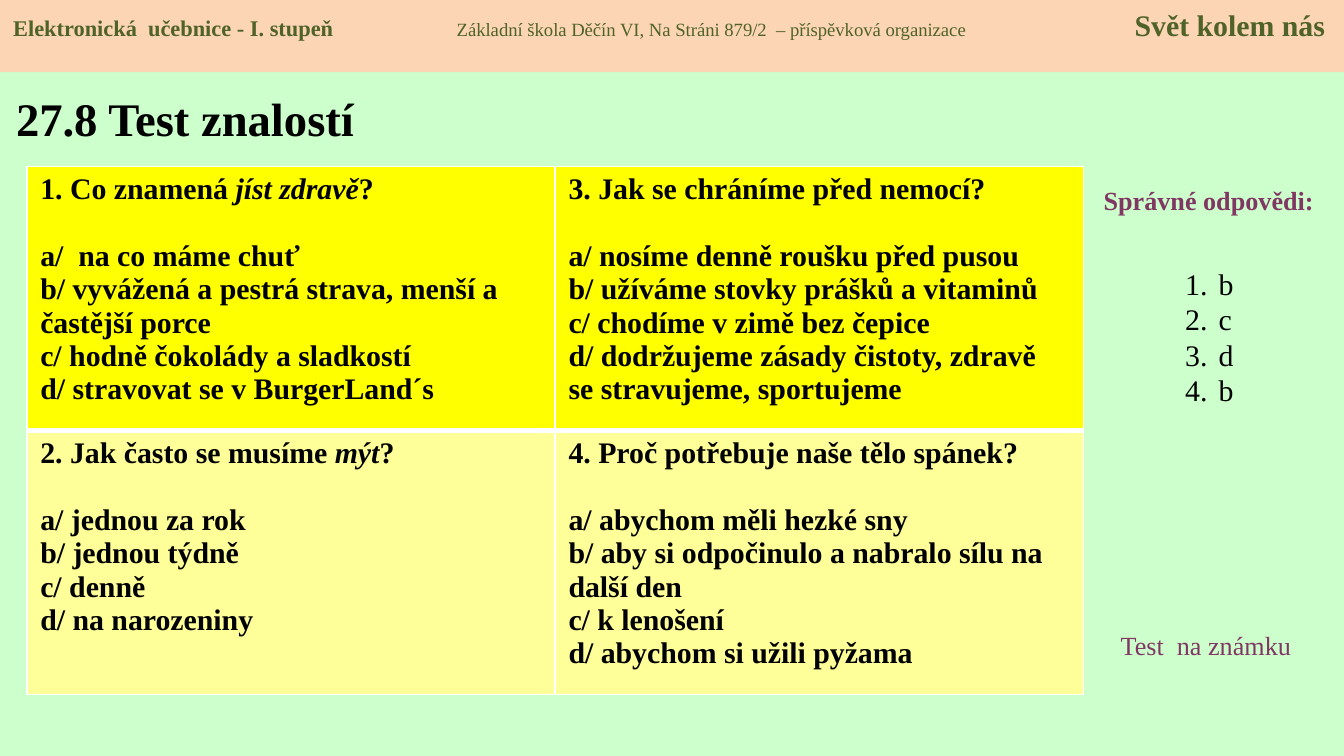
from lxml import etree
from pptx import Presentation
from pptx.dml.color import RGBColor
from pptx.enum.shapes import MSO_SHAPE
from pptx.enum.text import MSO_ANCHOR, PP_ALIGN
from pptx.oxml import parse_xml
from pptx.oxml.ns import nsdecls, qn
from pptx.util import Pt

RECTANGLE = MSO_SHAPE.RECTANGLE
TOP, MIDDLE = MSO_ANCHOR.TOP, MSO_ANCHOR.MIDDLE
LEFT, CENTER = PP_ALIGN.LEFT, PP_ALIGN.CENTER
BLACK, WHITE, PLUM, GREEN = "000000", "FFFFFF", "813763", "4F6228"


def color(value):
    return RGBColor.from_string(value)


def add_run(paragraph, text, font_color, **formats):
    run = paragraph.add_run()
    run.text = text
    run.font.color.rgb = color(font_color)
    for name, value in {"name": "Times New Roman", **formats}.items():
        setattr(run.font, name, value)


presentation = Presentation()
presentation.slide_width, presentation.slide_height = Pt(720), Pt(405)
slide = presentation.slides.add_slide(presentation.slide_layouts[6])
slide.background.fill.solid()
slide.background.fill.fore_color.rgb = color("CCFFCC")

labels = [
    ("27.8 Test znalostí", (1.5, 39.6, 229.7, 46.8), LEFT, MIDDLE, BLACK, {"size": Pt(25), "bold": True}),
    ("Správné odpovědi:", (579.6, 95, 136, 24.5), CENTER, TOP, PLUM, {"size": Pt(14), "bold": True}),
    ("Test  na známku", (593.3, 333.4, 113, 24.5), LEFT, TOP, PLUM, {"size": Pt(14)}),
]
for text, box, alignment, anchor, font_color, formats in labels:
    frame = slide.shapes.add_textbox(*map(Pt, box)).text_frame
    frame.word_wrap = True
    frame.vertical_anchor = anchor
    frame.paragraphs[0].alignment = alignment
    add_run(frame.paragraphs[0], text, font_color, **formats)

questions = [
    [
        (["1. Co znamená ", "jíst zdravě", "?"],
         ["a/  na co máme chuť", "b/ vyvážená a pestrá strava, menší a častější porce",
          "c/ hodně čokolády a sladkostí", "d/ stravovat se v BurgerLand´s"]),
        (["3. Jak se chráníme před nemocí?"],
         ["a/ nosíme denně roušku před pusou", "b/ užíváme stovky prášků a vitaminů",
          "c/ chodíme v zimě bez čepice", "d/ dodržujeme zásady čistoty, zdravě",
          "se stravujeme, sportujeme"]),
    ],
    [
        (["2. Jak často se musíme ", "mýt", "?"],
         ["a/ jednou za rok", "b/ jednou týdně", "c/ denně", "d/ na narozeniny"]),
        (["4. Proč potřebuje naše tělo spánek?"],
         ["a/ abychom měli hezké sny", "b/ aby si odpočinulo a nabralo sílu na další den",
          "c/ k lenošení", "d/ abychom si užili pyžama"]),
    ],
]
row_fills = ["FFFF00", "FFFF99"]
table = slide.shapes.add_table(2, 2, Pt(14.4), Pt(89.2), Pt(566), Pt(283)).table
table.first_row = table.horz_banding = False
for column in table.columns:
    column.width = Pt(283)
for row in table.rows:
    row.height = Pt(141.5)

for row_index, row in enumerate(questions):
    for column_index, (question, options) in enumerate(row):
        cell = table.cell(row_index, column_index)
        properties = cell._tc.get_or_add_tcPr()
        for side in "LRTB":
            is_divider = (row_index, side) in [(0, "B"), (1, "T")]
            properties.append(parse_xml(
                f'<a:ln{side} {nsdecls("a")} w="{Pt(3 if is_divider else 1)}">'
                f'<a:solidFill><a:srgbClr val="{WHITE}"/></a:solidFill></a:ln{side}>'))
        cell.fill.solid()
        cell.fill.fore_color.rgb = color(row_fills[row_index])
        frame = cell.text_frame
        for index, part in enumerate(question):
            add_run(frame.paragraphs[0], part, BLACK, size=Pt(16), bold=True, italic=index == 1)
        for index, option in enumerate(options):
            paragraph = frame.add_paragraph()
            paragraph.space_before = Pt(0 if index else 18)
            add_run(paragraph, option, BLACK, size=Pt(16), bold=True)

frame = slide.shapes.add_textbox(Pt(627.8), Pt(118.8), Pt(39.6), Pt(143.3)).text_frame
frame.word_wrap = True
frame.margin_top, frame.margin_right = Pt(23.7), Pt(0)
for index, answer in enumerate("bcdb"):
    paragraph = frame.add_paragraph() if index else frame.paragraphs[0]
    paragraph.line_spacing = Pt(19)
    add_run(paragraph, answer, BLACK, size=Pt(16))
    properties = paragraph._p.get_or_add_pPr()
    properties.set("marL", str(Pt(18)))
    properties.set("indent", str(Pt(-18)))
    etree.SubElement(properties, qn("a:buFont"), typeface="Times New Roman")
    etree.SubElement(properties, qn("a:buAutoNum"), type="arabicPeriod")

header = slide.shapes.add_shape(RECTANGLE, Pt(0), Pt(0), Pt(720), Pt(38.7))
header.shadow.inherit = False
header.fill.solid()
header.fill.fore_color.rgb = color("FCD5B5")
header.line.fill.background()
header.text_frame.vertical_anchor = TOP
paragraph = header.text_frame.paragraphs[0]
paragraph.alignment = LEFT
tabs = etree.SubElement(paragraph._p.get_or_add_pPr(), qn("a:tabLst"))
for position in (237.6, 600.8):
    etree.SubElement(tabs, qn("a:tab"), pos=str(Pt(position)), algn="l")
for text, size, bold in [
    ("Elektronická  učebnice - I. stupeň\t", 12, True),
    ("Základní škola Děčín VI, Na Stráni 879/2  – příspěvková organizace\t", 10, False),
    ("Svět kolem nás", 16, True),
]:
    add_run(paragraph, text, GREEN, size=Pt(size), bold=bold)

presentation.save("out.pptx")
